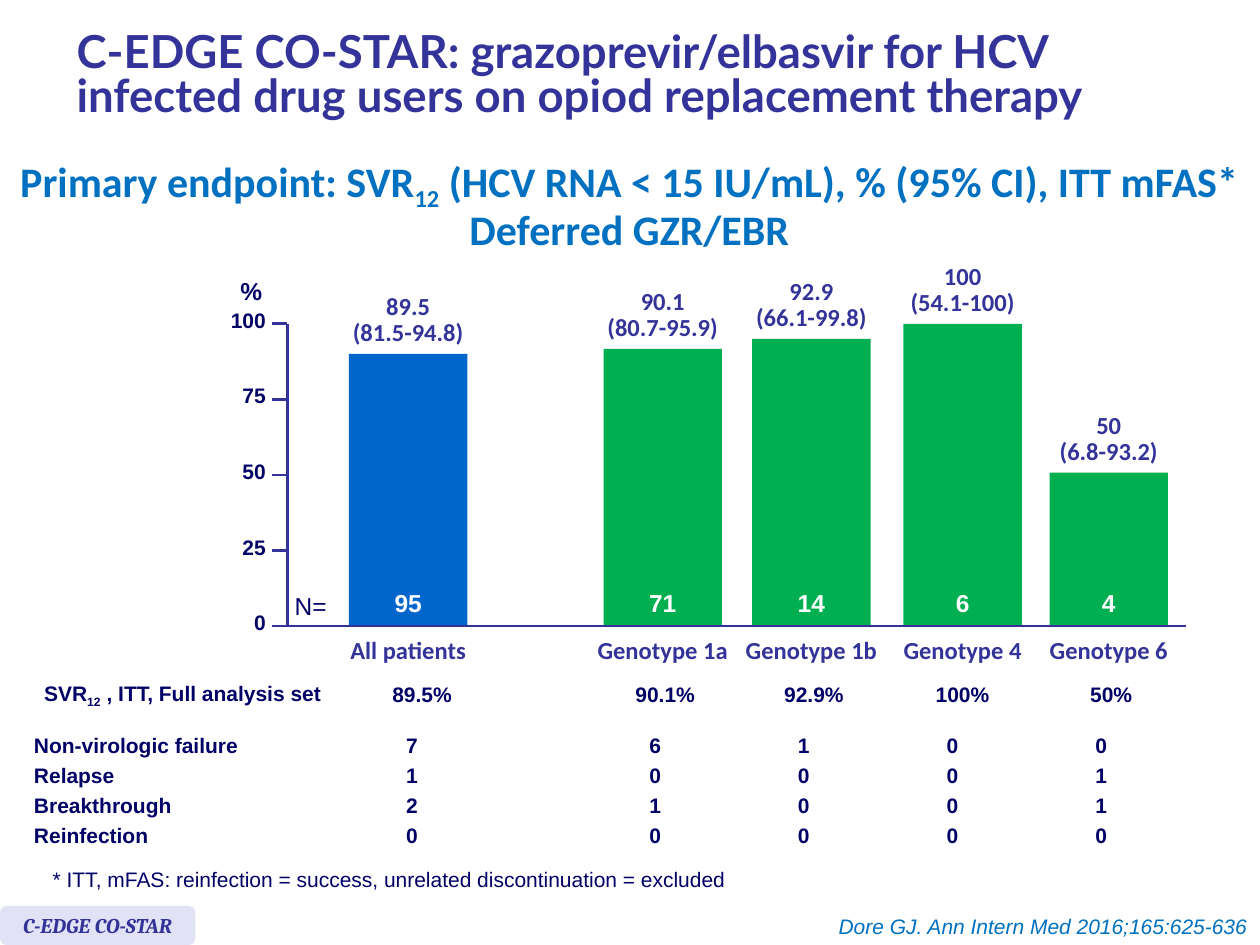
from lxml.etree import SubElement
from pptx import Presentation
from pptx.dml.color import RGBColor
from pptx.enum.shapes import MSO_CONNECTOR as Connector, MSO_SHAPE as Shape
from pptx.enum.text import MSO_ANCHOR as Anchor, PP_ALIGN as Align
from pptx.oxml.ns import qn
from pptx.util import Inches, Pt

# Content; text between bars "|" is subscript
TITLE = ("C-EDGE CO-STAR: grazoprevir/elbasvir for HCV infected drug users "
         "on opiod replacement therapy")
ENDPOINT = ["Primary endpoint: SVR|12| (HCV RNA < 15 IU/mL), % (95% CI), ITT mFAS*",
            "Deferred GZR/EBR"]
FOOTNOTE = "* ITT, mFAS: reinfection = success, unrelated discontinuation = excluded"
CITATION = "Dore GJ. Ann Intern Med 2016;165:625-636"
TRIAL = "C-EDGE CO-STAR"

# Group, SVR, confidence interval, N, bar centre, bar top, colour
GROUPS = [
    ("All patients", "89.5", "(81.5-94.8)", "95", 3.24, 2.81, "blue"),
    ("Genotype 1a", "90.1", "(80.7-95.9)", "71", 5.26, 2.77, "green"),
    ("Genotype 1b", "92.9", "(66.1-99.8)", "14", 6.44, 2.69, "green"),
    ("Genotype 4", "100", "(54.1-100)", "6", 7.64, 2.57, "green"),
    ("Genotype 6", "50", "(6.8-93.2)", "4", 8.8, 3.75, "green"),
]
TICKS = [100, 75, 50, 25, 0]
FULL_ANALYSIS = [
    ["SVR|12| , ITT, Full analysis set", "89.5%", "", "90.1%", "92.9%", "100%", "50%"],
]
FAILURES = [
    ["Non-virologic failure", "7", "", "6", "1", "0", "0"],
    ["Relapse", "1", "", "0", "0", "0", "1"],
    ["Breakthrough", "2", "", "1", "0", "0", "1"],
    ["Reinfection", "0", "", "0", "0", "0", "0"],
]

# Look and grid, in inches
COLORS = {"indigo": "333399", "navy": "000066", "sky": "0070C0", "blue": "0066CC",
          "green": "00B050", "lilac": "E2E2F6", "white": "FFFFFF"}
COLUMNS = [2.44, 1.26, 0.71] + [1.18] * 4
ROW_H = 0.24
AXIS_X, AXIS_END, AXIS_TOP, BASE_Y = 2.28, 9.41, 2.57, 4.97
TICK_W, BAR_W, LABEL_W = 0.12, 0.94, 1.16

prs = Presentation()
prs.slide_width, prs.slide_height = Inches(10), Inches(7.5)
slide = prs.slides.add_slide(prs.slide_layouts[6])


def rgb(name):
    return RGBColor.from_string(COLORS[name])


def write(paragraph, text, size, font, color, bold=True, italic=False,
          align=Align.LEFT, spacing=None):
    paragraph.alignment = align
    if spacing:
        paragraph.line_spacing = Pt(spacing)
    for i, part in enumerate(text.split("|")):
        run = paragraph.add_run()
        run.text = part
        run.font.size, run.font.name = Pt(size), font
        run.font.bold, run.font.italic = bold, italic
        run.font.color.rgb = rgb(color)
        if i % 2:
            run._r.get_or_add_rPr().set("baseline", "-25000")


def fill_frame(frame, lines, *style, inset=(0, 0), anchor=Anchor.TOP, wrap=True, **options):
    frame.word_wrap, frame.vertical_anchor = wrap, anchor
    frame.margin_left = frame.margin_right = Inches(inset[0])
    frame.margin_top = frame.margin_bottom = Inches(inset[1])
    for i, line in enumerate(lines):
        paragraph = frame.add_paragraph() if i else frame.paragraphs[0]
        write(paragraph, line, *style, **options)


def add_text(box, lines, *style, **options):
    frame = slide.shapes.add_textbox(*map(Inches, box)).text_frame
    fill_frame(frame, lines, *style, **options)


def add_block(kind, box, color):
    block = slide.shapes.add_shape(kind, *map(Inches, box))
    block.shadow.inherit = False
    block.fill.solid()
    block.fill.fore_color.rgb = rgb(color)
    block.line.fill.background()
    return block


def add_line(*ends):
    line = slide.shapes.add_connector(Connector.STRAIGHT, *map(Inches, ends))
    line.line.color.rgb, line.line.width = rgb("indigo"), Pt(1.5)
    SubElement(line._element.spPr, qn("a:effectLst"))


def add_results(left, top, rows):
    box = (left, top, sum(COLUMNS), ROW_H * len(rows))
    table = slide.shapes.add_table(len(rows), len(COLUMNS), *map(Inches, box)).table
    table.first_row = table.horz_banding = False
    for column, width in zip(table.columns, COLUMNS):
        column.width = Inches(width)
    for r, row in enumerate(rows):
        for c, text in enumerate(row):
            cell = table.cell(r, c)
            cell.fill.background()
            cell.vertical_anchor = Anchor.MIDDLE
            cell.margin_left = cell.margin_right = Inches(0.07)
            cell.margin_top = cell.margin_bottom = 0
            paragraph = cell.text_frame.paragraphs[0]
            if text:
                write(paragraph, text, 12, "Arial", "navy",
                      align=Align.CENTER if c else Align.LEFT)
            else:  # keeps the gap column from stretching its row
                SubElement(paragraph._p, qn("a:endParaRPr")).set("sz", "1200")


# Headings
PADDED = (0.1, 0.05)
add_text((0.51, 0.08, 9.13, 1.07), [TITLE], 26, "Lato", "indigo",
         inset=PADDED, anchor=Anchor.MIDDLE, spacing=25)
add_text((0.03, 1.31, 9.93, 0.77), ENDPOINT, 24, "Calibri", "sky",
         inset=PADDED, wrap=False, align=Align.CENTER, spacing=23.6)

# Bars with their labels
for group, svr, interval, n, centre, top, color in GROUPS:
    add_block(Shape.RECTANGLE, (centre - BAR_W / 2, top, BAR_W, BASE_Y - top), color)
    left = centre - LABEL_W / 2
    add_text((left, top - 0.47, LABEL_W, 0.42), [svr, interval], 14, "Calibri", "indigo",
             align=Align.CENTER, spacing=14.8)
    add_text((left, 5.04, LABEL_W, 0.24), [group], 14, "Calibri", "indigo", align=Align.CENTER)
    add_text((left, 4.67, LABEL_W, 0.24), [n], 14, "Arial", "white", align=Align.CENTER)

# Axes
add_line(AXIS_X, AXIS_TOP, AXIS_X, BASE_Y)
add_line(AXIS_X, BASE_Y, AXIS_END, BASE_Y)
for tick in TICKS:
    y = BASE_Y - (BASE_Y - AXIS_TOP) * tick / 100
    add_line(AXIS_X - TICK_W, y, AXIS_X, y)
    add_text((1.71, y - 0.13, 0.4, 0.2), [str(tick)], 12, "Arial", "navy", align=Align.RIGHT)
add_text((1.81, 2.14, 0.4, 0.34), ["%"], 14, "Arial", "navy", inset=PADDED)
add_text((2.24, 4.64, 0.53, 0.34), ["N="], 14, "Arial", "navy", bold=False, inset=PADDED)

# Results under the bars
add_results(0.28, 5.4, FULL_ANALYSIS)
add_results(0.2, 5.8, FAILURES)

# Footer
add_text((0.32, 6.83, 5.8, 0.3), [FOOTNOTE], 12, "Arial", "navy", bold=False, inset=PADDED)
badge = add_block(Shape.ROUNDED_RECTANGLE, (0, 7.19, 1.55, 0.31), "lilac")
fill_frame(badge.text_frame, [TRIAL], 12, "Cambria", "indigo", italic=True,
           inset=PADDED, anchor=Anchor.MIDDLE, wrap=False, align=Align.CENTER)
add_text((6.4, 7.2, 3.6, 0.3), [CITATION], 12, "Arial", "sky", bold=False, italic=True,
         inset=PADDED, align=Align.RIGHT)

prs.save("out.pptx")
